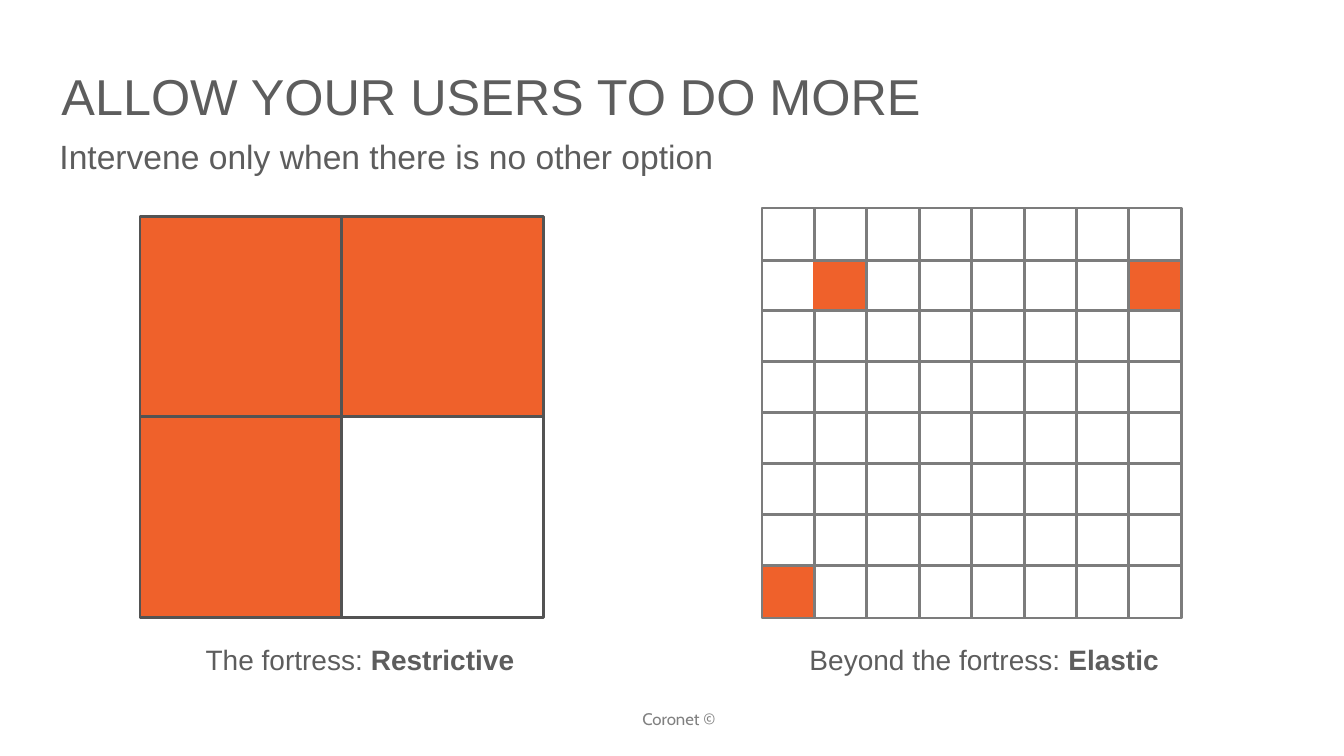
from dataclasses import dataclass
from itertools import product

from lxml.etree import SubElement
from pptx import Presentation
from pptx.dml.color import RGBColor as Rgb
from pptx.enum.shapes import MSO_SHAPE as Shape
from pptx.enum.text import MSO_ANCHOR as Anchor, MSO_AUTO_SIZE as Fit, PP_ALIGN as Align
from pptx.oxml.ns import qn
from pptx.util import Pt


@dataclass(frozen=True)
class Theme:
    text: str = "5D5D5D"
    foot: str = "808080"
    hot: str = "EF612B"
    calm: str = "FFFFFF"
    dark: str = "535353"
    grey: str = "7C7C7C"
    font: str = "Arial"
    alt: str = "Cabin"
    head: int = 36
    sub: int = 24
    label: int = 20
    small: int = 12
    edge: int = 2
    inset: float = 3.6


class Deck:
    def __init__(self, theme):
        self.theme = theme
        self.prs = Presentation()
        self.prs.slide_width, self.prs.slide_height = Pt(960), Pt(540)
        self.slide = self.prs.slides.add_slide(self.prs.slide_layouts[1])

    def put_text(self, shape, runs, size, lead=None, font=None, color=None,
                 align=Align.LEFT, anchor=Anchor.TOP):
        """Fill a shape with one paragraph of (text, bold) runs."""
        t, frame = self.theme, shape.text_frame
        frame.word_wrap, frame.auto_size = True, Fit.NONE
        frame.vertical_anchor = anchor
        frame.margin_left = frame.margin_right = Pt(t.inset)
        frame.margin_top = frame.margin_bottom = Pt(t.inset)
        para = frame.paragraphs[0]
        para.alignment, para.space_before = align, Pt(0)
        if lead:
            para.line_spacing = Pt(lead)
        for text, bold in runs:
            run = para.add_run()
            run.text = text
            run.font.name, run.font.size = font or t.font, Pt(size)
            run.font.bold = bold
            run.font.color.rgb = Rgb.from_string(color or t.text)
        return para

    def holder(self, idx, box, text, size):
        """Move a template placeholder to box and set one line in it."""
        shape = self.slide.placeholders[idx]
        shape.left, shape.top, shape.width, shape.height = map(Pt, box)
        para = self.put_text(shape, [(text, False)], size, 42)
        if idx:
            props = para._p.get_or_add_pPr()
            props.set("marL", "0")
            props.set("indent", "0")
            SubElement(props, qn("a:buNone"))

    def label(self, box, runs, size, home=None, **style):
        shapes = (home or self.slide).shapes
        self.put_text(shapes.add_textbox(*map(Pt, box)), runs, size, **style)

    def cell(self, home, box, fill, line):
        rect = home.shapes.add_shape(Shape.RECTANGLE, *map(Pt, box))
        rect.shadow.inherit = False
        rect.fill.solid()
        rect.fill.fore_color.rgb = Rgb.from_string(fill)
        rect.line.color.rgb = Rgb.from_string(line)
        rect.line.width = Pt(self.theme.edge)

    def grid(self, home, left, top, step, size, order, hot, line, bare=()):
        """Draw cells in order; hot ones are filled, bare ones lose their outline."""
        for row, col in order:
            spot = (row, col)
            box = (left + col * step[0], top + row * step[1], *size)
            self.cell(home, box, self.theme.hot if spot in hot else self.theme.calm,
                      self.theme.hot if spot in bare else line)

    def group(self):
        return self.slide.shapes.add_group_shape()


def main():
    t = Theme()
    deck = Deck(t)
    deck.holder(0, (40.3, 43.9, 897, 70.6), "ALLOW YOUR USERS TO DO MORE", t.head)
    deck.holder(1, (38.9, 80.6, 897, 70.6),
                "Intervene only when there is no other option", t.sub)

    fort = deck.group()
    deck.label((143.3, 447.1, 244, 36), [("The fortress: ", False), ("Restrictive", True)],
               t.label, fort, lead=32)
    deck.grid(fort, 100.1, 154.8, (144, 142.8), (144, 143.3),
              [(0, 1), (0, 0), (1, 0), (1, 1)], {(0, 0), (0, 1), (1, 0)}, t.dark)

    beyond = deck.group()
    deck.label((574.6, 447.1, 291.6, 36),
               [("Beyond the fortress: ", False), ("Elastic", True)],
               t.label, beyond, lead=32)
    deck.grid(beyond, 544.3, 148.5, (37.44, 36.5), (37.44, 37.44),
              product([*range(1, 8), 0], range(8)),
              {(1, 1), (1, 7), (7, 0)}, t.grey, {(1, 1)})

    deck.label((452.2, 503.3, 65.5, 20.9), [("Coronet ©", False)], t.small,
               font=t.alt, color=t.foot, align=Align.CENTER, anchor=Anchor.BOTTOM)
    deck.prs.save("out.pptx")


if __name__ == "__main__":
    main()
